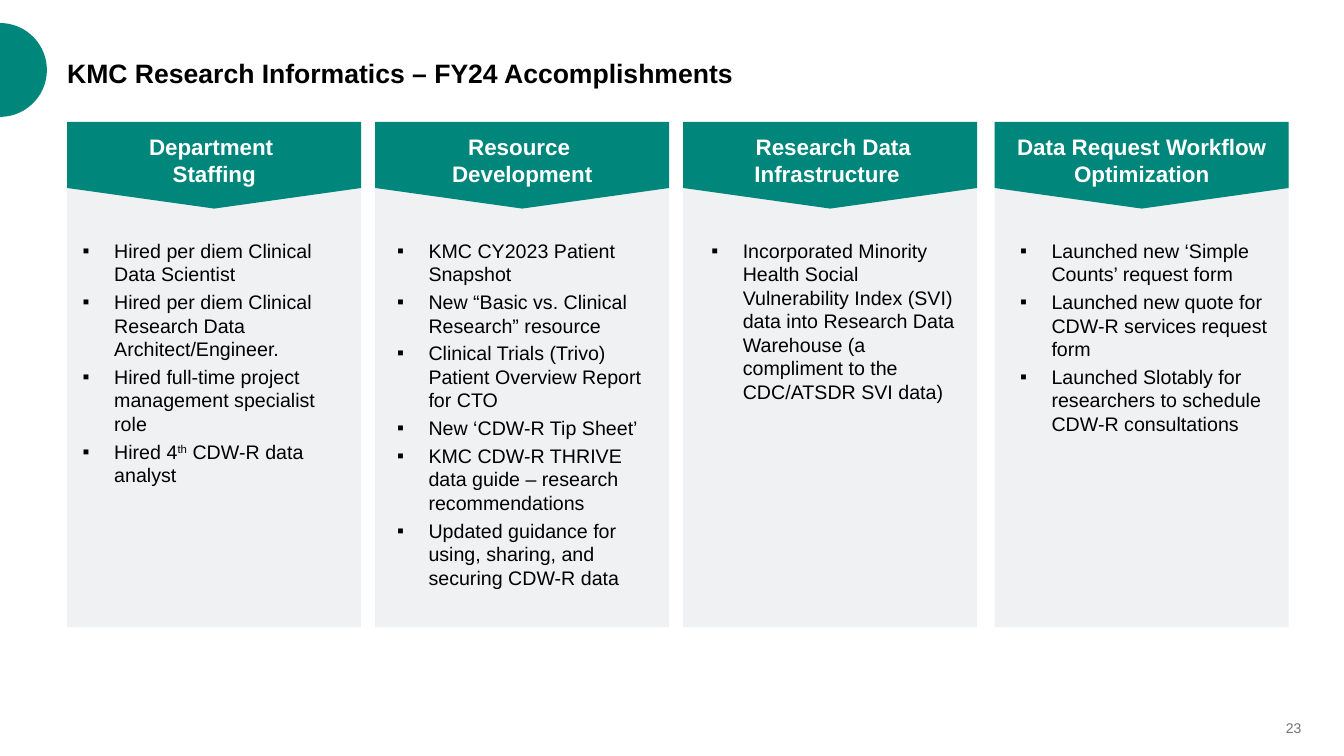
import math

import lxml.etree
import pptx
import pptx.dml.color
import pptx.enum.shapes
import pptx.enum.text
import pptx.oxml.ns
import pptx.util

Pt = pptx.util.Pt
SHAPE = pptx.enum.shapes.MSO_SHAPE
ALIGN = pptx.enum.text.PP_ALIGN
ANCHOR = pptx.enum.text.MSO_ANCHOR

TEAL = "00867B"
PANEL = "EFF1F2"
BLACK = "000000"
WHITE = "FFFFFF"
GRAY = "767171"

COLUMN_WIDTH = 210
COLUMNS = [
    (48, 4, ["Department ", "Staffing"], [
        "Hired per diem Clinical Data Scientist",
        "Hired per diem Clinical Research Data Architect/Engineer.",
        "Hired full-time project management specialist role",
        "Hired 4^th^ CDW-R data analyst",
    ]),
    (268, 8.5, ["Resource ", "Development"], [
        "KMC CY2023 Patient Snapshot",
        "New “Basic vs. Clinical Research” resource",
        "Clinical Trials (Trivo) Patient Overview Report for CTO",
        "New ‘CDW-R Tip Sheet’",
        "KMC CDW-R THRIVE data guide – research recommendations",
        "Updated guidance for using, sharing, and securing CDW-R data",
    ]),
    (488, 13, [" Research Data Infrastructure "], [
        "Incorporated Minority Health Social Vulnerability Index (SVI) data into "
        "Research Data Warehouse (a compliment to the CDC/ATSDR SVI data)",
    ]),
    (710.5, 11, ["Data Request Workflow Optimization"], [
        "Launched new ‘Simple Counts’ request form",
        "Launched new quote for CDW-R services request form",
        "Launched Slotably for researchers to schedule CDW-R consultations",
    ]),
]


def color(value):
    return pptx.dml.color.RGBColor.from_string(value)


def paint(shape, fill):
    shape.shadow.inherit = False
    shape.fill.solid()
    shape.fill.fore_color.rgb = color(fill)
    shape.line.fill.background()


def add_bullet(paragraph, indent):
    properties = paragraph._p.get_or_add_pPr()
    properties.set("marL", str(Pt(indent)))
    properties.set("indent", str(-Pt(indent)))
    qualified = pptx.oxml.ns.qn
    bullet_color = lxml.etree.SubElement(properties, qualified("a:buClr"))
    lxml.etree.SubElement(bullet_color, qualified("a:srgbClr"), val=BLACK)
    lxml.etree.SubElement(properties, qualified("a:buFont"), typeface="Arial")
    lxml.etree.SubElement(properties, qualified("a:buChar"), char="▪")


def write_text(shape, lines, size, ink, bold=False, align=ALIGN.LEFT, anchor=ANCHOR.TOP,
               margins=(0, 0, 0, 0), bullet_indent=None, space_after=0, line_spacing=1.0):
    frame = shape.text_frame
    frame.word_wrap = True
    frame.auto_size = pptx.enum.text.MSO_AUTO_SIZE.NONE
    frame.vertical_anchor = anchor
    frame.margin_left, frame.margin_top, frame.margin_right, frame.margin_bottom = map(Pt, margins)
    for index, line in enumerate(lines):
        paragraph = frame.add_paragraph() if index else frame.paragraphs[0]
        if bullet_indent:
            add_bullet(paragraph, bullet_indent)
        paragraph.alignment = align
        paragraph.space_before = Pt(0)
        paragraph.space_after = Pt(space_after)
        paragraph.line_spacing = line_spacing
        for position, part in enumerate(line.split("^")):
            run = paragraph.add_run()
            run.text = part
            run.font.name = "Arial"
            run.font.size = Pt(size)
            run.font.bold = bold
            run.font.color.rgb = color(ink)
            if position % 2:
                run._r.get_or_add_rPr().set("baseline", "30000")


def add_half_disc(slide, left, top, radius):
    points = []
    for degrees in range(-90, 91, 3):
        angle = math.radians(degrees)
        points.append((Pt(left + radius * math.cos(angle)),
                       Pt(top + radius + radius * math.sin(angle))))
    builder = slide.shapes.build_freeform(*points[0])
    builder.add_line_segments(points[1:], close=True)
    paint(builder.convert_to_shape(), TEAL)


def add_title(slide, left, top, width, height):
    title = slide.shapes.title
    title.left, title.top, title.width, title.height = map(Pt, (left, top, width, height))
    write_text(title, ["KMC Research Informatics – FY24 Accomplishments"], 19, BLACK, bold=True,
               anchor=ANCHOR.MIDDLE, margins=(0, 3.6, 7.2, 3.6), line_spacing=0.9)


def add_header(slide, lines, left, top, width, height):
    shift = (width - height) / 2
    header = slide.shapes.add_shape(SHAPE.PENTAGON, Pt(left + shift), Pt(top - shift),
                                    Pt(height), Pt(width))
    header.rotation = 90
    header.adjustments[0] = 0.237
    paint(header, TEAL)
    write_text(header, lines, 16, WHITE, bold=True, align=ALIGN.CENTER, anchor=ANCHOR.MIDDLE)
    header.text_frame._txBody.bodyPr.set("vert", "vert270")


def add_column(slide, heading, items, list_offset, left, top, width, height):
    panel = slide.shapes.add_shape(SHAPE.RECTANGLE, Pt(left), Pt(top), Pt(width), Pt(height))
    paint(panel, PANEL)
    add_header(slide, heading, left, top - 3, width, 62)
    items_box = slide.shapes.add_textbox(Pt(left + list_offset), Pt(top + 80.5), Pt(192), Pt(260))
    write_text(items_box, items, 14, BLACK, margins=(7.2, 0, 7.2, 0),
               bullet_indent=22.5, space_after=3)


def add_page_number(slide, left, top, width, height):
    number = slide.shapes.add_textbox(Pt(left), Pt(top), Pt(width), Pt(height))
    write_text(number, ["23"], 10, GRAY, align=ALIGN.RIGHT, anchor=ANCHOR.BOTTOM,
               margins=(0, 3.6, 0, 3.6))


def main():
    presentation = pptx.Presentation()
    presentation.slide_width = Pt(960)
    presentation.slide_height = Pt(540)
    slide = presentation.slides.add_slide(presentation.slide_layouts[5])
    add_half_disc(slide, 0, 16.5, 33.5)
    add_title(slide, 48, 29, 882, 49)
    for left, list_offset, heading, items in COLUMNS:
        add_column(slide, heading, items, list_offset, left, 90, COLUMN_WIDTH, 358)
    add_page_number(slide, 897, 500.5, 32.5, 29)
    presentation.save("out.pptx")


if __name__ == "__main__":
    main()
